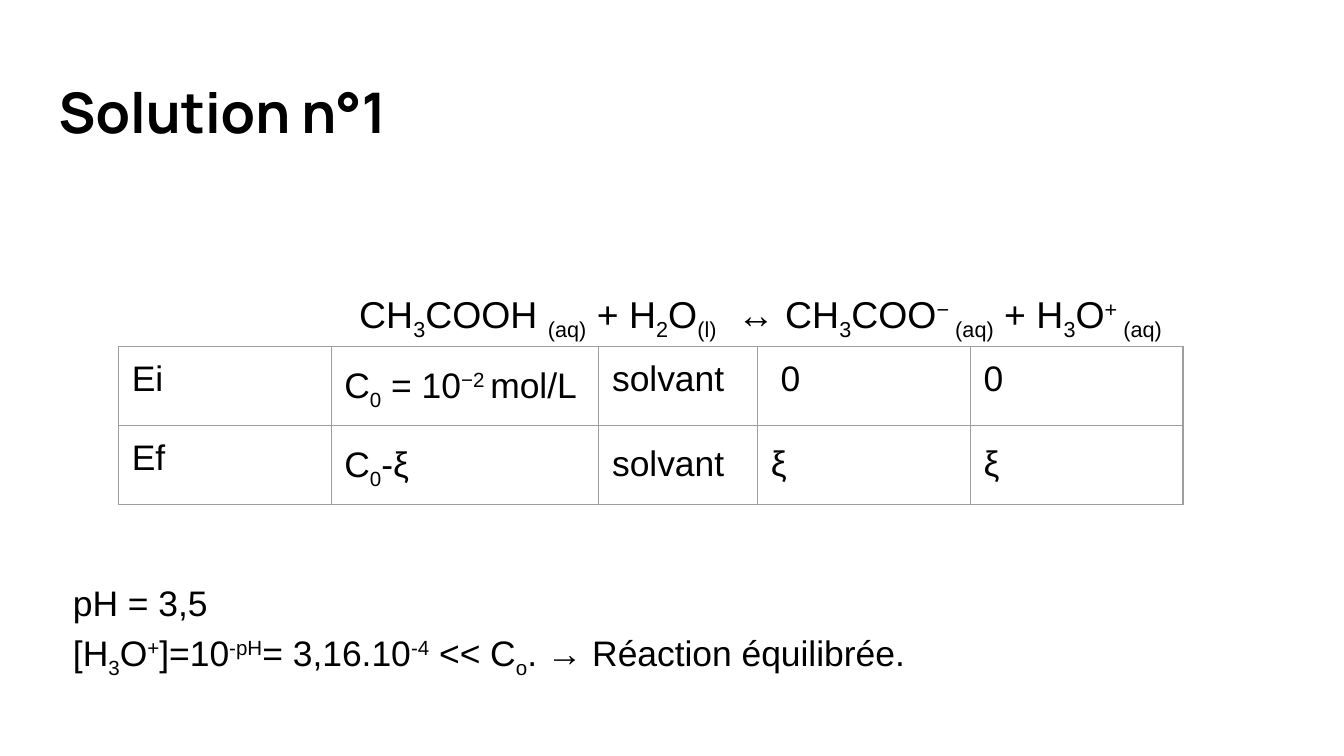
from lxml import etree
from pptx import Presentation
from pptx.dml.color import RGBColor
from pptx.enum.text import MSO_ANCHOR, PP_ALIGN
from pptx.oxml.ns import qn
from pptx.util import Cm, Pt

LEFT = PP_ALIGN.LEFT
TOP, MIDDLE = MSO_ANCHOR.TOP, MSO_ANCHOR.MIDDLE
TITLE_ONLY = 5
COLOURS = {"text": "000000", "border": "9E9E9E"}
BASELINES = {"_": "-25000", "^": "30000"}
INSET = Cm(0.25)


class SlideBuilder:
    """Holds the style and the current slide."""

    body_font = "Arial"
    title_font = "Manrope"
    body_size = 19
    loose = 1.15

    def __init__(self, deck):
        self.page = deck.slides.add_slide(deck.slide_layouts[TITLE_ONLY])

    def style_span(self, span, font, size, bold=False):
        span.font.name = font
        span.font.size = Pt(size)
        span.font.bold = bold
        span.font.color.rgb = RGBColor.from_string(COLOURS["text"])

    def frame(self, holder, anchor):
        holder.margin_left = holder.margin_right = INSET
        holder.margin_top = holder.margin_bottom = INSET
        holder.vertical_anchor = anchor

    def formula(self, para, markup, size, spacing):
        """Runs are parted by |; a leading _ lowers a run and ^ raises it."""
        para.alignment = LEFT
        para.line_spacing = spacing
        for part in markup.split("|"):
            span = para.add_run()
            span.text = part.lstrip("_^")
            self.style_span(span, self.body_font, size)
            if part[0] in BASELINES:
                span.font._element.set("baseline", BASELINES[part[0]])

    def title(self, text, left, top, width, height):
        box = self.page.shapes.title
        box.left, box.top = Cm(left), Cm(top)
        box.width, box.height = Cm(width), Cm(height)
        self.frame(box.text_frame, MIDDLE)
        box.text_frame.text = text
        para = box.text_frame.paragraphs[0]
        para.alignment = LEFT
        self.style_span(para.runs[0], self.title_font, 30, bold=True)

    def text(self, lines, left, top, width, height, size):
        box = self.page.shapes.add_textbox(Cm(left), Cm(top), Cm(width), Cm(height))
        frame = box.text_frame
        frame.word_wrap = True
        self.frame(frame, TOP)
        for index, line in enumerate(lines):
            para = frame.add_paragraph() if index else frame.paragraphs[0]
            self.formula(para, line, size, self.loose)

    def border(self, cell):
        properties = cell._tc.get_or_add_tcPr()
        for index, side in enumerate(("lnL", "lnR", "lnT", "lnB")):
            line = etree.Element(qn(f"a:{side}"), w=str(Pt(0.75)))
            fill = etree.SubElement(line, qn("a:solidFill"))
            etree.SubElement(fill, qn("a:srgbClr"), val=COLOURS["border"])
            properties.insert(index, line)

    def table(self, rows, widths, row_height, left, top):
        table = self.page.shapes.add_table(
            len(rows), len(widths), Cm(left), Cm(top),
            Cm(sum(widths)), Cm(row_height * len(rows))).table
        table.first_row = table.horz_banding = False
        for column, width in zip(table.columns, widths):
            column.width = Cm(width)
        for row, contents in zip(table.rows, rows):
            row.height = Cm(row_height)
            for cell, (markup, spacing) in zip(row.cells, contents):
                self.frame(cell, TOP)
                cell.fill.background()
                self.border(cell)
                self.formula(cell.text_frame.paragraphs[0], markup,
                             self.body_size, spacing)


def main():
    deck = Presentation()
    deck.slide_width, deck.slide_height = Cm(25.4), Cm(14.29)
    slide = SlideBuilder(deck)
    loose = slide.loose

    slide.title("Solution n°1", 0.86, 1.24, 23.67, 1.73)

    # Progress of the reaction: initial and final states
    slide.table(
        [
            [("Ei", 1), ("C|_0| = 10|^−2 |mol/L", loose), ("solvant", 1),
             (" 0", 1), ("0", 1)],
            [("Ef", 1), ("C|_0|-ξ", loose), ("solvant", loose),
             ("ξ", loose), ("ξ", loose)],
        ],
        widths=[4.02, 5.06, 3, 4.02, 4.02], row_height=1.49, left=2.24, top=6.55)

    # Reaction equation above the table
    slide.text(
        ["CH|_3|COOH |_(aq)| + H|_2|O|_(l)|  ↔ CH|_3|COO|^−|_ (aq)"
         "| + H|_3|O|^+|_ (aq)"],
        6.54, 5.11, 18.86, 1.44, size=20)

    # Conclusion
    slide.text(
        ["pH = 3,5",
         "[H|_3|O|^+|]=10|^-pH|= 3,16.10|^-4| << C|_o|. → Réaction équilibrée."],
        1.13, 10.62, 22.35, 2.4, size=slide.body_size)

    deck.save("out.pptx")


if __name__ == "__main__":
    main()
